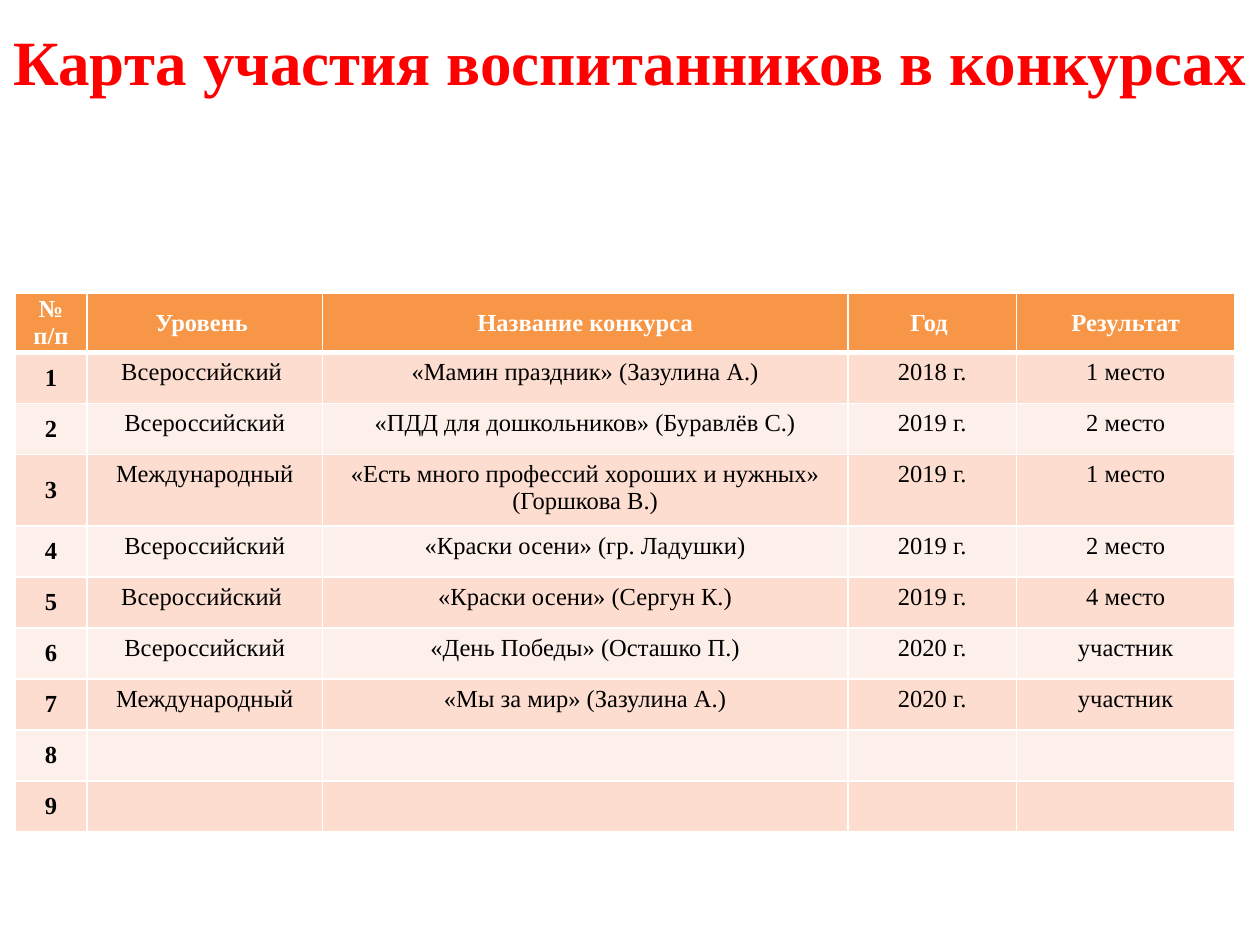
from lxml import etree
from pptx import Presentation
from pptx.dml.color import RGBColor
from pptx.enum.text import MSO_ANCHOR, PP_ALIGN
from pptx.oxml.ns import qn
from pptx.util import Inches, Pt

CENTER = PP_ALIGN.CENTER
MIDDLE = MSO_ANCHOR.MIDDLE
BLANK_LAYOUT = 6
FONT = "Times New Roman"
COLORS = {
    "title": "FF0000",
    "header": "F79646",
    "odd": "FCDDCF",
    "even": "FDEFE9",
    "text": "000000",
    "white": "FFFFFF",
}
COLUMN_WIDTHS = [0.57, 1.87, 4.17, 1.34, 1.73]
HEADERS = ["№\nп/п", "Уровень ", "Название конкурса", "Год ", "Результат"]
CONTESTS = [
    ("Всероссийский ", "«Мамин праздник» (Зазулина А.)", "2018 г.", "1 место"),
    ("Всероссийский", "«ПДД для дошкольников» (Буравлёв С.)", "2019 г.", "2 место"),
    ("Международный", "«Есть много профессий хороших и нужных» (Горшкова В.)",
     "2019 г.", "1 место"),
    ("Всероссийский", "«Краски осени» (гр. Ладушки)", "2019 г.", "2 место"),
    ("Всероссийский ", "«Краски осени» (Сергун К.)", "2019 г.", "4 место"),
    ("Всероссийский", "«День Победы» (Осташко П.)", "2020 г.", "участник"),
    ("Международный", "«Мы за мир» (Зазулина А.)", "2020 г.", "участник"),
    ("", "", "", ""),
    ("", "", "", ""),
]


def write_text(frame, text, size=14, color="text", bold=False):
    """Write centred text, one paragraph per line."""
    frame.word_wrap = True
    frame.text = text
    for para in frame.paragraphs:
        para.alignment = CENTER
        para.font.size = Pt(size)
        for span in para.runs:
            span.font.name = FONT
            span.font.size = Pt(size)
            span.font.bold = bold
            span.font.color.rgb = RGBColor.from_string(COLORS[color])


def add_title(page, text):
    box = page.shapes.add_textbox(0, 0, Inches(10), Inches(0.95))
    frame = box.text_frame
    frame.margin_left = frame.margin_right = 0
    frame.vertical_anchor = MIDDLE
    write_text(frame, text, size=36, color="title", bold=True)


def set_borders(cell, bottom=1):
    properties = cell._tc.get_or_add_tcPr()
    for side, width in (("L", 1), ("R", 1), ("T", 1), ("B", bottom)):
        line = etree.SubElement(properties, qn(f"a:ln{side}"), w=str(Pt(width)))
        fill = etree.SubElement(line, qn("a:solidFill"))
        etree.SubElement(fill, qn("a:srgbClr"), val=COLORS["white"])


def format_cell(cell, text, fill, bottom=1, compact=False, **text_format):
    set_borders(cell, bottom)
    cell.fill.solid()
    cell.fill.fore_color.rgb = RGBColor.from_string(COLORS[fill])
    if compact:
        cell.vertical_anchor = MIDDLE
        cell.margin_left = cell.margin_right = Inches(0.07)
        cell.margin_top = cell.margin_bottom = 0
    write_text(cell.text_frame, text, **text_format)


def add_contest_table(page):
    table = page.shapes.add_table(
        len(CONTESTS) + 1, len(HEADERS), Inches(0.12), Inches(2.33),
        Inches(sum(COLUMN_WIDTHS)), Inches(4.05)).table
    for column, width in zip(table.columns, COLUMN_WIDTHS):
        column.width = Inches(width)

    # Header row
    for column, text in enumerate(HEADERS):
        format_cell(table.cell(0, column), text, "header", bottom=3,
                    compact=True, color="white", bold=True)

    # Numbered contest rows in alternating tints
    for number, contest in enumerate(CONTESTS, start=1):
        fill = "odd" if number % 2 else "even"
        format_cell(table.cell(number, 0), str(number), fill,
                    compact=True, bold=True)
        for column, text in enumerate(contest, start=1):
            format_cell(table.cell(number, column), text, fill)

    # Heavy rule shared by the header and the first contest row
    for cell in table.rows[1].cells:
        cell._tc.tcPr.find(qn("a:lnT")).set("w", str(Pt(3)))


def main():
    deck = Presentation()
    deck.slide_width, deck.slide_height = Inches(10), Inches(7.5)
    page = deck.slides.add_slide(deck.slide_layouts[BLANK_LAYOUT])
    add_title(page, "Карта участия воспитанников в конкурсах")
    add_contest_table(page)
    deck.save("out.pptx")


if __name__ == "__main__":
    main()
